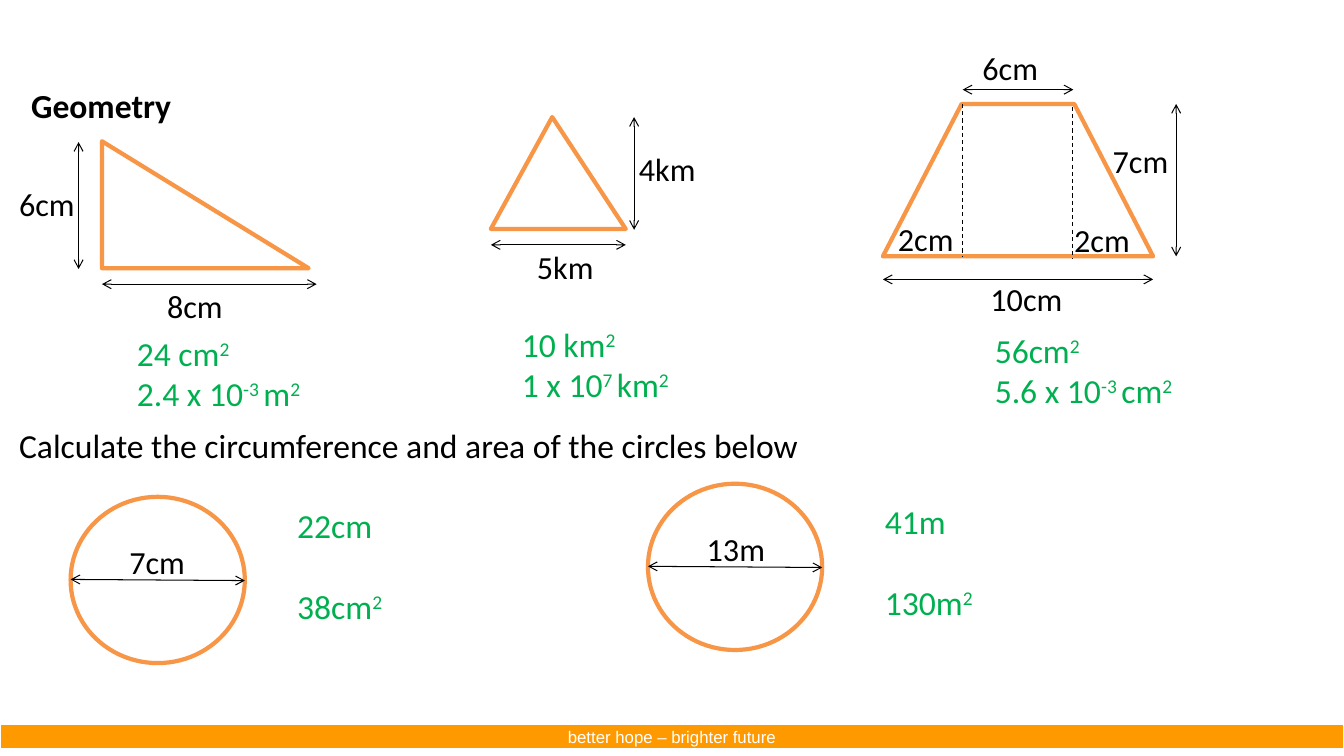
from pptx import Presentation
from pptx.dml.color import RGBColor
from pptx.enum.dml import MSO_LINE
from pptx.enum.shapes import MSO_CONNECTOR, MSO_SHAPE as Preset
from pptx.enum.text import MSO_ANCHOR as Anchor, PP_ALIGN as Align
from pptx.oxml.ns import qn
from pptx.util import Cm, Pt
from lxml.etree import SubElement

BLACK, WHITE, GREEN = "000000", "FFFFFF", "00B050"
OUTLINE, BAR = "F79646", "FF9900"


def colour(hex_text):
    return RGBColor.from_string(hex_text)


class GeometrySlide:
    def __init__(self, slide):
        self.slide = slide
        self.font = "Calibri"

    def add_runs(self, paragraph, text, size, ink, bold=False, font=None):
        """Write text run by run; every second piece between ^ marks is superscript."""
        for index, piece in enumerate(text.split("^")):
            if not piece:
                continue
            run = paragraph.add_run()
            run.text = piece
            run.font.name = font or self.font
            run.font.size = Pt(size)
            run.font.bold = bold
            run.font.color.rgb = colour(ink)
            if index % 2:
                run._r.get_or_add_rPr().set("baseline", "30000")

    def title(self, text, left, top, width, height):
        title = self.slide.shapes.title
        title.left, title.top, title.width, title.height = map(Cm, (left, top, width, height))
        frame = title.text_frame
        frame.vertical_anchor = Anchor.TOP
        frame.word_wrap = True
        frame.paragraphs[0].alignment = Align.LEFT
        self.add_runs(frame.paragraphs[0], text, 24, BLACK, bold=True)

    def text(self, lines, left, top, width, height, size=24, ink=BLACK, wrap=False, gap=0):
        frame = self.slide.shapes.add_textbox(*map(Cm, (left, top, width, height))).text_frame
        frame.word_wrap = wrap
        for index, line in enumerate(lines):
            paragraph = frame.add_paragraph() if index else frame.paragraphs[0]
            if index and gap:
                paragraph.space_before = Pt(gap)
            self.add_runs(paragraph, line, size, ink)

    def label(self, text, left, top, width=1.93):
        self.text([text], left, top, width, 1.24, size=23)

    def figure(self, preset, left, top, width, height, adjustment=None,
               fill=WHITE, line=OUTLINE, weight=3):
        shape = self.slide.shapes.add_shape(preset, *map(Cm, (left, top, width, height)))
        shape.shadow.inherit = False
        shape.fill.solid()
        shape.fill.fore_color.rgb = colour(fill)
        shape.line.color.rgb = colour(line)
        shape.line.width = Pt(weight)
        if adjustment is not None:
            shape.adjustments[0] = adjustment
        return shape

    def line(self, x1, y1, x2, y2, dashed=False):
        """Draw a dashed guide or a dimension line with an arrow at both ends."""
        connector = self.slide.shapes.add_connector(
            MSO_CONNECTOR.STRAIGHT, *map(Cm, (x1, y1, x2, y2)))
        connector.line.color.rgb = colour(BLACK)
        connector.line.width = Pt(0.75)
        if dashed:
            connector.line.dash_style = MSO_LINE.DASH
        else:
            outline = connector.line._get_or_add_ln()
            for end in ("a:headEnd", "a:tailEnd"):
                SubElement(outline, qn(end)).set("type", "arrow")
        SubElement(connector._element.spPr, qn("a:effectLst"))

    def circle(self, left, top, diameter):
        self.figure(Preset.OVAL, left, top, 4.39, 4.19)
        self.line(left, top + 2.08, left + 4.39, top + 2.11)
        self.label(diameter, left + 1.23, top + 1.03, 2)

    def footer_bar(self, text):
        bar = self.figure(Preset.RECTANGLE, 0, 18.24, 33.87, 0.64,
                          fill=BAR, line=WHITE, weight=1.5)
        frame = bar.text_frame
        frame.vertical_anchor = Anchor.MIDDLE
        frame.paragraphs[0].alignment = Align.CENTER
        self.add_runs(frame.paragraphs[0], text, 12, WHITE, font="Arial")


def main():
    presentation = Presentation()
    presentation.slide_width, presentation.slide_height = Cm(33.87), Cm(19.05)
    page = GeometrySlide(presentation.slides.add_slide(presentation.slide_layouts[5]))

    page.footer_bar("better hope – brighter future")
    page.title("Geometry", 0.53, 2.01, 31.8, 1.27)

    page.figure(Preset.RIGHT_TRIANGLE, 2.57, 3.56, 5.21, 3.2)
    page.figure(Preset.TRAPEZOID, 22.25, 2.62, 6.81, 3.84, 0.517)
    page.figure(Preset.ISOSCELES_TRIANGLE, 12.37, 2.95, 3.4, 2.82, 0.455)

    for ends in [
        (1.98, 3.58, 1.98, 6.78), (2.57, 7.16, 7.98, 7.16),
        (15.98, 2.95, 15.98, 5.79), (12.37, 6.17, 15.77, 6.17),
        (29.64, 2.62, 29.64, 6.46), (22.25, 7.04, 29.06, 7.04),
        (24.26, 2.26, 27.05, 2.26),
    ]:
        page.line(*ends)
    page.line(24.26, 2.62, 24.26, 6.45, dashed=True)
    page.line(27.03, 2.69, 27.03, 6.53, dashed=True)

    for text, left, top in [
        ("8cm", 3.96, 7.09), ("6cm", 0.23, 4.52),
        ("5km", 13.28, 6.12), ("4km", 15.85, 3.63),
        ("6cm", 24.51, 1.09), ("7cm", 27.79, 3.43),
        ("2cm", 22.38, 5.41), ("2cm", 26.82, 5.44),
    ]:
        page.label(text, left, top)
    page.label("10cm", 24.71, 6.91, 2.34)

    for lines, left, top, width in [
        (["24 cm^2", "2.4 x 10^-3 ^m^2"], 3.2, 8.26, 4.78),
        (["10 km^2", "1 x 10^7 ^km^2"], 12.9, 8.03, 4.34),
        (["56cm^2", "5.6 x 10^-3 ^cm^2"], 24.82, 8.18, 5.13),
    ]:
        page.text(lines, left, top, width, 2.31, ink=GREEN)

    page.text(["Calculate the circumference and area of the circles below"],
              0.23, 10.59, 30.2, 1.27, wrap=True)
    page.circle(1.78, 12.52, "7cm")
    page.circle(16.33, 12.19, "13m")
    for lines, left, top in [
        (["22cm", "38cm^2"], 7.24, 12.6),
        (["41m", "130m^2"], 22.05, 12.5),
    ]:
        page.text(lines, left, top, 9.09, 3.33, ink=GREEN, wrap=True, gap=29)

    presentation.save("out.pptx")


if __name__ == "__main__":
    main()
